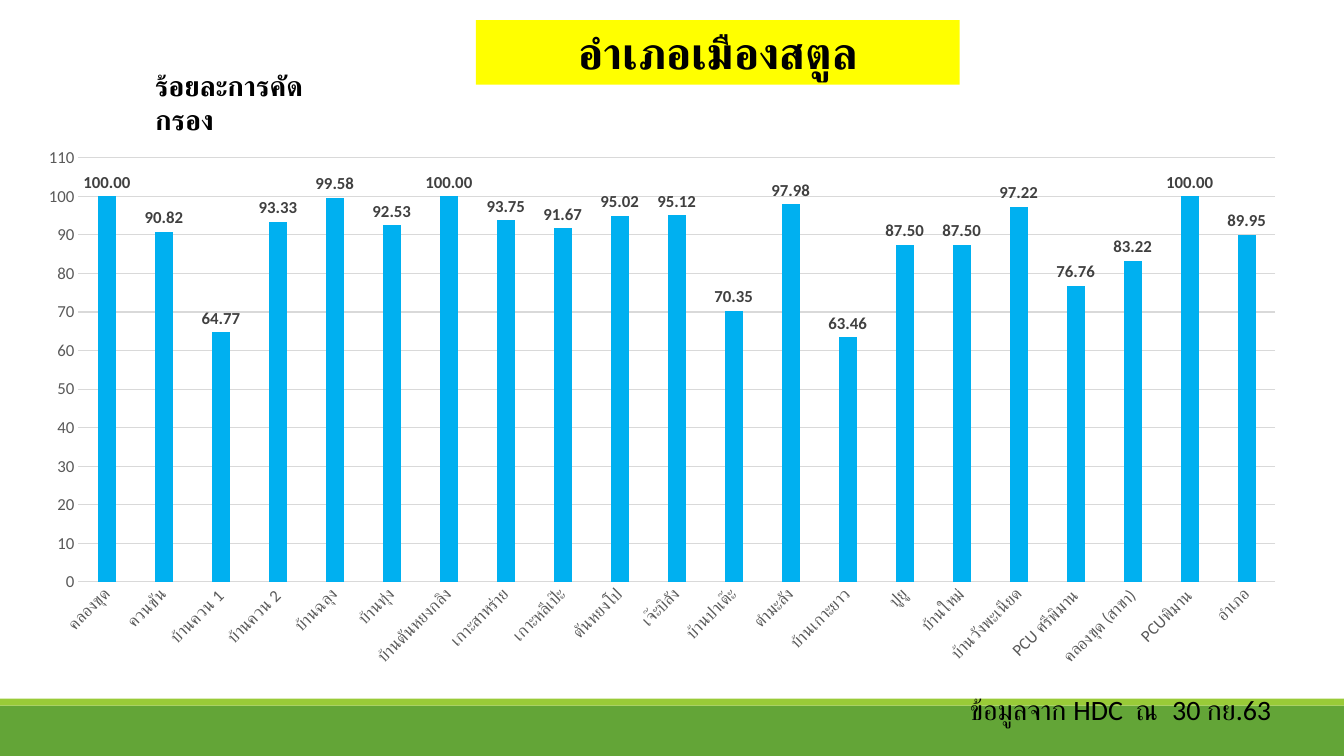
from pptx import Presentation
from pptx.chart.data import CategoryChartData
from pptx.dml.color import RGBColor
from pptx.enum.chart import XL_CHART_TYPE as Kind, XL_LABEL_POSITION as Spot, XL_TICK_MARK as Tick
from pptx.enum.shapes import MSO_SHAPE as Form
from pptx.enum.text import MSO_ANCHOR as Anchor, MSO_AUTO_SIZE as Auto, PP_ALIGN as Align
from pptx.util import Inches, Pt

WIDE, HIGH = Inches(13.33), Inches(7.5)
FONT = "Calibri"
RATES = {
    "คลองขุด": 100, "ควนขัน": 90.82, "บ้านควน 1": 64.77, "บ้านควน 2": 93.33,
    "บ้านฉลุง": 99.58, "บ้านทุ่ง": 92.53, "บ้านตันหยงกลิง": 100,
    "เกาะสาหร่าย": 93.75, "เกาะหลีเป๊ะ": 91.67, "ตันหยงโป": 95.02,
    "เจ๊ะบิลัง": 95.12, "บ้านปาเต๊ะ": 70.35, "ตำมะลัง": 97.98,
    "บ้านเกาะยาว": 63.46, "ปูยู": 87.5, "บ้านใหม่": 87.5,
    "บ้านวังพะเนียด": 97.22, "PCU ศรีพิมาน": 76.76, "คลองขุด (สาขา)": 83.22,
    "PCUพิมาน": 100, "อำเภอ": 89.95,
}


def color(code):
    return RGBColor.from_string(code)


def place(x, y, w, h):
    """Turn percentages of the slide's size into lengths."""
    return [int(side * part / 100) for side, part in zip((WIDE, HIGH, WIDE, HIGH), (x, y, w, h))]


def style(font, size, code, bold=False):
    font.name, font.size, font.bold = FONT, Pt(size), bold
    font.color.rgb = color(code)


def rule(line, code="D9D9D9"):
    line.color.rgb = color(code)
    line.width = Pt(0.75)


def band(slide, area, fill):
    shape = slide.shapes.add_shape(Form.RECTANGLE, *place(*area))
    shape.shadow.inherit = False
    shape.fill.solid()
    shape.fill.fore_color.rgb = color(fill)
    shape.line.fill.background()
    return shape


def write(slide, text, area, size=20, bold=False, align=Align.LEFT, fill=None):
    if fill:
        box = band(slide, area, fill)
    else:
        box = slide.shapes.add_textbox(*place(*area))
    frame = box.text_frame
    frame.word_wrap = True
    frame.auto_size = Auto.SHAPE_TO_FIT_TEXT
    frame.vertical_anchor = Anchor.TOP
    line = frame.paragraphs[0]
    line.alignment = align
    run = line.add_run()
    run.text = text
    style(run.font, size, "000000", bold)


def plot(slide, rates, area):
    data = CategoryChartData()
    data.categories = list(rates)
    data.add_series("ร้อยละการคัดกรอง", list(rates.values()))
    chart = slide.shapes.add_chart(Kind.COLUMN_CLUSTERED, *place(*area), data).chart
    chart.has_legend = chart.has_title = False
    style(chart.font, 10, "000000")

    names, scale = chart.category_axis, chart.value_axis
    for axis in (names, scale):
        axis.major_tick_mark = axis.minor_tick_mark = Tick.NONE
        style(axis.tick_labels.font, 12, "595959")
    rule(names.format.line)
    names.has_major_gridlines = False
    turn = names.tick_labels.font._element.getparent().getparent().getparent().bodyPr
    turn.set("rot", str(-45 * 60000))
    turn.set("vert", "horz")

    scale.minimum_scale, scale.maximum_scale, scale.major_unit = 0, 110, 10
    scale.tick_labels.number_format = "0"
    scale.tick_labels.number_format_is_linked = False
    scale.format.line.fill.background()
    rule(scale.major_gridlines.format.line)

    bars = chart.plots[0]
    bars.gap_width, bars.overlap, bars.vary_by_categories = 219, -27, False
    fill = bars.series[0].format.fill
    fill.solid()
    fill.fore_color.rgb = color("00B0F0")
    bars.has_data_labels = True
    labels = bars.data_labels
    labels.show_value = True
    labels.position = Spot.OUTSIDE_END
    labels.number_format = "0.00"
    labels.number_format_is_linked = False
    style(labels.font, 12, "404040", True)


def main():
    deck = Presentation()
    deck.slide_width, deck.slide_height = WIDE, HIGH
    slide = deck.slides.add_slide(deck.slide_layouts[6])
    band(slide, (0, 93.33, 100, 6.67), "63A537")
    band(slide, (0, 92.4, 100, 0.93), "99CB38")
    plot(slide, RATES, (1.73, 18.13, 95.05, 71.47))
    write(slide, "อำเภอเมืองสตูล", (35.41, 2.67, 36, 8.53),
          size=32, bold=True, align=Align.CENTER, fill="FFFF00")
    write(slide, "ร้อยละการคัดกรอง", (10.8, 8.4, 13.88, 5.87), bold=True)
    write(slide, "ข้อมูลจาก HDC  ณ  30 กย.63", (71.42, 90.93, 24.61, 5.87))
    deck.save("out.pptx")


if __name__ == "__main__":
    main()
